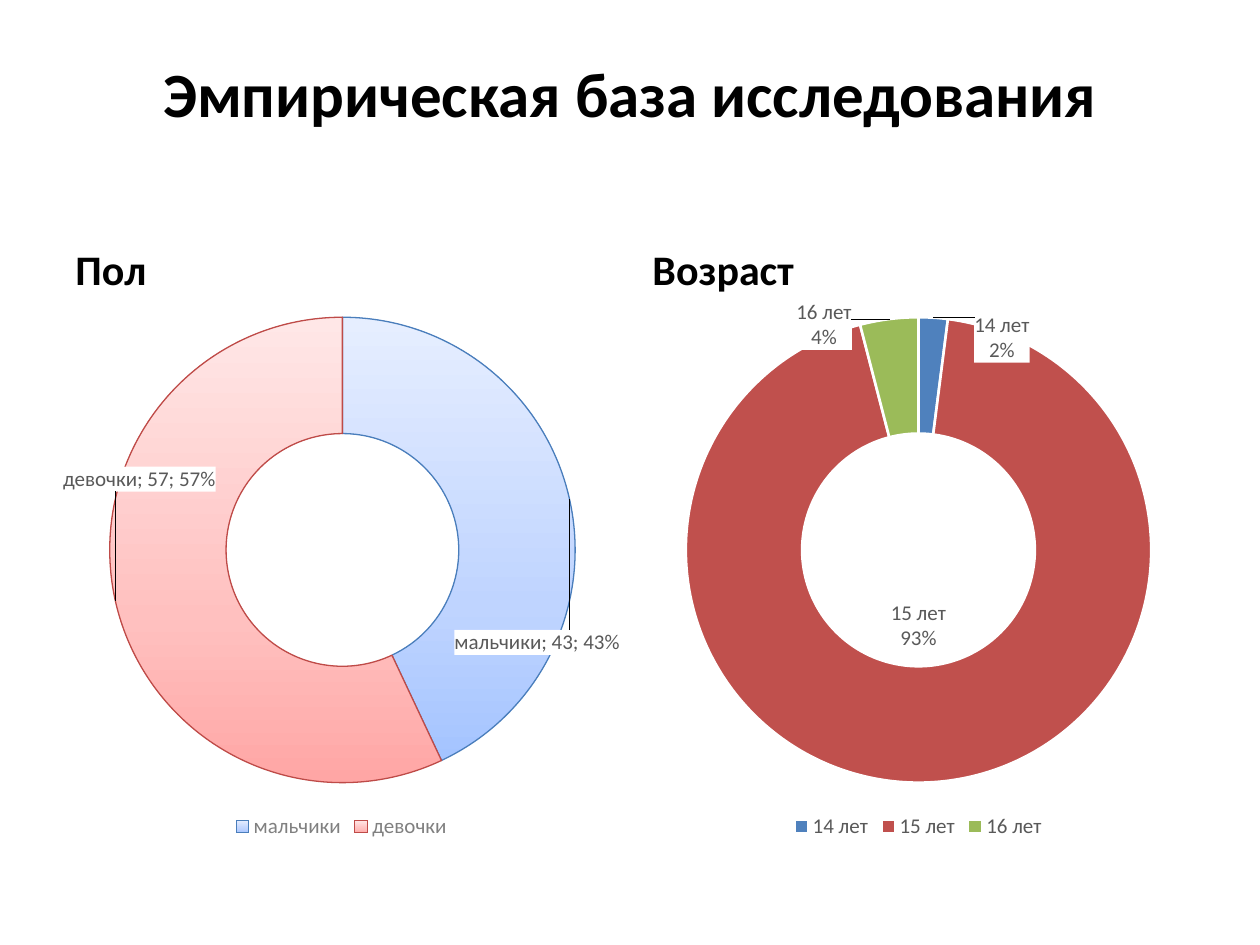
from lxml import etree
from pptx import Presentation
from pptx.chart.data import CategoryChartData as ChartData
from pptx.dml.color import RGBColor
from pptx.enum.chart import XL_CHART_TYPE as ChartType, XL_LEGEND_POSITION as LegendPosition
from pptx.enum.text import MSO_ANCHOR as Anchor, PP_ALIGN as Align
from pptx.oxml import parse_xml
from pptx.oxml.ns import nsdecls, qn
from pptx.util import Inches, Pt


def color(value):
    """Turn a hex string into a colour."""
    return RGBColor.from_string(value)


def set_font(font, size, ink="000000", bold=False):
    """Format a font in the deck's typeface."""
    font.name = "Calibri"
    font.size = Pt(size)
    font.bold = bold
    font.color.rgb = color(ink)


def write_text(shape, text, size, align=Align.LEFT, anchor=Anchor.MIDDLE, before=0):
    """Put one bold paragraph into a shape."""
    frame = shape.text_frame
    frame.word_wrap = True
    frame.vertical_anchor = anchor
    para = frame.paragraphs[0]
    para.alignment = align
    para.space_before = Pt(before)
    span = para.add_run()
    span.text = text
    set_font(span.font, size, bold=True)


def gradient(stops):
    """Build an upward gradient fill from position and colour pairs."""
    marks = "".join(
        f'<a:gs pos="{place * 1000}"><a:srgbClr val="{shade}"/></a:gs>' for place, shade in stops
    )
    return parse_xml(
        f'<a:gradFill {nsdecls("a")} rotWithShape="1"><a:gsLst>{marks}</a:gsLst>'
        '<a:lin ang="16200000" scaled="1"/></a:gradFill>'
    )


def point_label(index, offset, separator, percent):
    """Build a white label moved from its default place."""
    x, y = offset
    return parse_xml(
        f'<c:dLbl {nsdecls("c", "a")}><c:idx val="{index}"/>'
        f'<c:layout><c:manualLayout><c:x val="{x}"/><c:y val="{y}"/></c:manualLayout></c:layout>'
        '<c:spPr><a:solidFill><a:srgbClr val="FFFFFF"/></a:solidFill></c:spPr>'
        '<c:showLegendKey val="0"/><c:showVal val="1"/><c:showCatName val="1"/>'
        f'<c:showSerName val="0"/><c:showPercent val="{int(percent)}"/><c:showBubbleSize val="0"/>'
        f'<c:separator>{separator}</c:separator></c:dLbl>'
    )


class SurveySlide:
    """Hold the style and the current slide."""

    label_ink = "595959"
    column_width = Inches(4.42)

    def __init__(self, deck):
        """Add a title-only slide to the deck."""
        self.slide = deck.slides.add_slide(deck.slide_layouts[5])

    def title(self, text):
        """Place the slide title."""
        box = self.slide.shapes.title
        box.left, box.top, box.width, box.height = map(Inches, (0.5, 0.3, 9, 0.87))
        write_text(box, text, 36, Align.CENTER)

    def heading(self, text, left):
        """Place a heading above a chart."""
        box = self.slide.shapes.add_textbox(Inches(left), Inches(1.68), self.column_width, Inches(0.7))
        write_text(box, text, 24, anchor=Anchor.BOTTOM, before=4.8)

    def doughnut(self, left, values, fills, lines, line_width, offsets, separator,
                 percent, number_format, legend_ink):
        """Place a doughnut chart with moved labels."""
        data = ChartData()
        data.categories = list(values)
        data.add_series("Series 1", list(values.values()))
        chart = self.slide.shapes.add_chart(
            ChartType.DOUGHNUT, Inches(left), Inches(2.38), self.column_width, Inches(4.32), data
        ).chart
        chart.has_title = False
        set_font(chart.font, 10)
        chart.has_legend = True
        chart.legend.position = LegendPosition.BOTTOM
        chart.legend.include_in_layout = False
        set_font(chart.legend.font, 12, legend_ink)
        plot = chart.plots[0]
        plot.vary_by_categories = True
        plot._element.find(qn("c:holeSize")).set("val", "75")
        series = plot.series[0]
        labels = series.data_labels
        set_font(labels.font, 12, self.label_ink)
        labels.number_format = number_format
        labels.number_format_is_linked = False
        labels.show_value = labels.show_category_name = True
        labels.show_percentage = percent
        label_list = series._element.find(qn("c:dLbls"))
        text_format = label_list.find(qn("c:txPr"))
        value_format = label_list.find(qn("c:numFmt"))
        for index, (fill, line, offset) in enumerate(zip(fills, lines, offsets)):
            point = series.points[index]
            point.format.line.color.rgb = color(line)
            point.format.line.width = Pt(line_width)
            if isinstance(fill, str):
                point.format.fill.solid()
                point.format.fill.fore_color.rgb = color(fill)
            else:
                series._element.findall(qn("c:dPt"))[index].find(qn("c:spPr")).insert(0, gradient(fill))
            label = point_label(index, offset, separator, percent)
            label.insert(2, etree.fromstring(etree.tostring(value_format), label_list.getroottree().parser))
            label.insert(4, etree.fromstring(etree.tostring(text_format), label_list.getroottree().parser))
            label_list.insert(index, label)


def main():
    """Build and save the deck."""
    deck = Presentation()
    deck.slide_width, deck.slide_height = Inches(10), Inches(7.5)
    page = SurveySlide(deck)
    page.title("Эмпирическая база исследования")
    page.heading("Пол", 0.5)
    page.heading("Возраст", 5.08)
    page.doughnut(
        0.5, {"мальчики": 43, "девочки": 57},
        fills=[
            [(0, "A4C4FF"), (35, "BFD4FF"), (100, "E6EEFF")],
            [(0, "FFA6A5"), (35, "FFC0BF"), (100, "FFE7E7")],
        ],
        lines=["4A7EBB", "BE4B48"], line_width=0.75,
        offsets=[(0.05, 0.24), (-0.06, -0.2)], separator="; ",
        percent=True, number_format="General", legend_ink="808080",
    )
    page.doughnut(
        5.08, {"14 лет": 2, "15 лет": 93, "16 лет": 4},
        fills=["4F81BD", "C0504D", "9BBB59"],
        lines=["FFFFFF"] * 3, line_width=1.5,
        offsets=[(0.13, -0.07), (-0.02, -0.18), (-0.13, -0.1)], separator="\n",
        percent=False, number_format='0"%"', legend_ink="595959",
    )
    deck.save("out.pptx")


if __name__ == "__main__":
    main()
